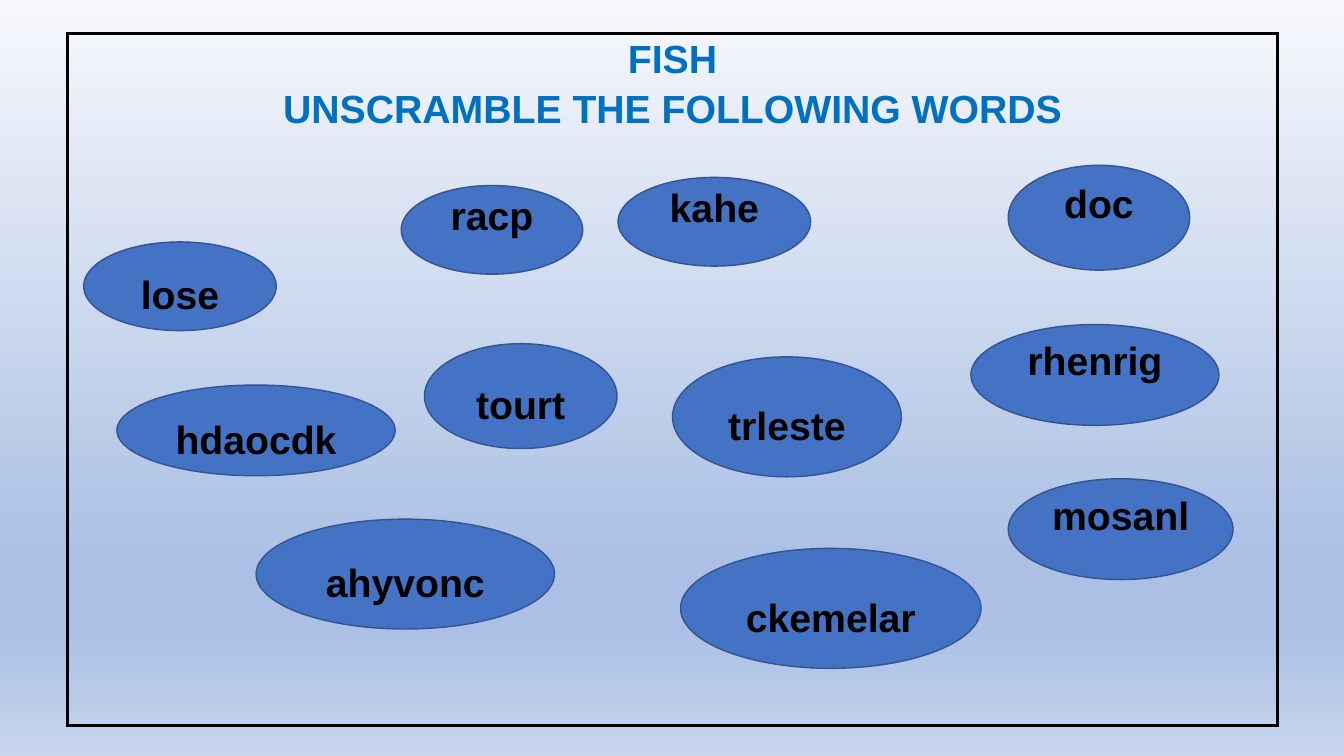
import copy

import pptx
import pptx.dml.color
import pptx.enum.shapes
import pptx.enum.text
import pptx.oxml
import pptx.oxml.ns
import pptx.util
from pptx.util import Inches

BACKGROUND_STOPS = [(0, "F6F8FC"), (0.74, "ABC0E4"), (0.83, "ABC0E4"), (1, "C7D5ED")]
HEADING = ["FISH", "UNSCRAMBLE THE FOLLOWING WORDS"]
# Word, left, top, width, height, whether the word sits low in its bubble
WORDS = [
    ("tourt", 4.21, 3.41, 1.91, 1.04, True),
    ("racp", 3.98, 1.84, 1.8, 0.88, False),
    ("doc", 10, 1.64, 1.8, 1.04, False),
    ("hdaocdk", 1.16, 3.82, 2.76, 0.9, True),
    ("ckemelar", 6.75, 5.44, 2.98, 1.19, True),
    ("ahyvonc", 2.54, 5.15, 2.96, 1.09, True),
    ("rhenrig", 9.63, 3.22, 2.46, 1, False),
    ("mosanl", 10, 4.75, 2.23, 1, False),
    ("kahe", 6.13, 1.76, 1.91, 0.88, False),
    ("trleste", 6.67, 3.54, 2.27, 1.19, True),
    ("lose", 0.83, 2.4, 1.91, 0.88, True),
]


def rgb(code):
    return pptx.dml.color.RGBColor.from_string(code)


def format_text(frame, color):
    for para in frame.paragraphs:
        para.alignment = pptx.enum.text.PP_ALIGN.CENTER
        for span in para.runs:
            span.font.name = "Arial"
            span.font.size = pptx.util.Pt(28)
            span.font.bold = True
            span.font.color.rgb = rgb(color)


def paint_background(page):
    fill = page.background.fill
    fill.gradient()
    fill.gradient_angle = 270
    stop_list = page.element.find(".//" + pptx.oxml.ns.qn("a:gsLst"))
    while len(stop_list) < len(BACKGROUND_STOPS):
        stop_list.append(copy.deepcopy(stop_list[0]))
    for stop, (position, color) in zip(fill.gradient_stops, BACKGROUND_STOPS):
        stop.position = position
        stop.color.rgb = rgb(color)


def border_cell(cell, color, points):
    properties = cell._tc.get_or_add_tcPr()
    for index, side in enumerate(("lnL", "lnR", "lnT", "lnB")):
        line = pptx.oxml.parse_xml(
            f'<a:{side} {pptx.oxml.ns.nsdecls("a")} w="{pptx.util.Pt(points)}">'
            f'<a:solidFill><a:srgbClr val="{color}"/></a:solidFill></a:{side}>'
        )
        properties.insert(index, line)


def add_framed_heading(page):
    """Add the one-cell table that frames the page and holds the heading."""
    table = page.shapes.add_table(
        1, 1, Inches(0.67), Inches(0.33), Inches(12), Inches(6.87)
    ).table
    table.first_row = False
    table.horz_banding = False
    cell = table.cell(0, 0)
    cell.fill.background()
    border_cell(cell, "000000", 2.25)
    cell.text_frame.text = "\n".join(HEADING)
    format_text(cell.text_frame, "0070C0")
    cell.text_frame.paragraphs[1].space_before = pptx.util.Pt(4.3)


def add_bubble(page, word, left, top, width, height, low):
    bubble = page.shapes.add_shape(
        pptx.enum.shapes.MSO_SHAPE.OVAL,
        Inches(left), Inches(top), Inches(width), Inches(height),
    )
    bubble.shadow.inherit = False
    bubble.fill.solid()
    bubble.fill.fore_color.rgb = rgb("4472C4")
    bubble.line.color.rgb = rgb("325491")
    bubble.line.width = pptx.util.Pt(1)
    frame = bubble.text_frame
    frame.word_wrap = True
    frame.vertical_anchor = pptx.enum.text.MSO_ANCHOR.MIDDLE
    frame.margin_top = Inches(0.16 if low else 0)
    frame.margin_bottom = Inches(0 if low else 0.29)
    frame.text = word
    format_text(frame, "000000")


def main():
    deck = pptx.Presentation()
    deck.slide_width = Inches(13.33)
    deck.slide_height = Inches(7.5)
    page = deck.slides.add_slide(deck.slide_layouts.get_by_name("Blank"))
    paint_background(page)
    add_framed_heading(page)
    for entry in WORDS:
        add_bubble(page, *entry)
    deck.save("out.pptx")


if __name__ == "__main__":
    main()
